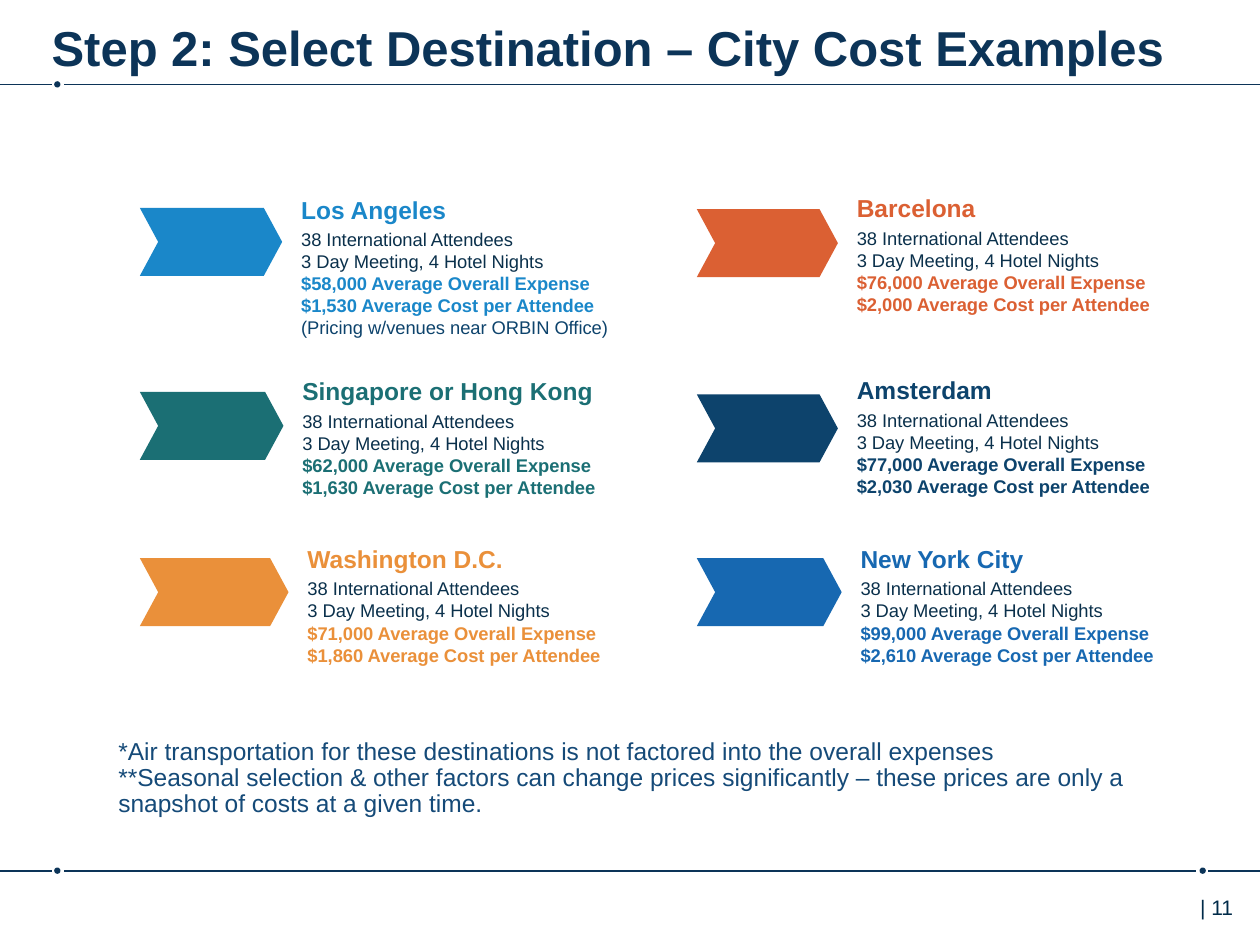
import lxml.etree
import pptx
import pptx.dml.color
import pptx.enum.shapes
import pptx.enum.text
import pptx.oxml.ns
import pptx.util

HUES = {
    "navy": "0C3458", "page": "002B49", "plain": "0A304B", "note": "154A78",
    "sky": "1A87C9", "teal": "1B6F74", "gold": "EA903A",
    "rust": "DB6033", "deep": "0D436C", "blue": "1768B1",
}
SHAPE = pptx.enum.shapes.MSO_SHAPE
ANCHOR = pptx.enum.text.MSO_ANCHOR
UNIT = pptx.util.Inches(0.1)  # grid of 100 columns by 75 rows
LEFT, RIGHT = 11.1, 55.3      # columns where the cards start

# start column, heading row, arrow drop, arrow width, heading and list widths
CARDS = [
    (LEFT, 15.2, 1.3, 11.3, 24.9, 26.1, "sky", "Los Angeles", "$58,000", "$1,530",
     "(Pricing w/venues near ORBIN Office)"),
    (LEFT, 29.6, 1.5, 11.4, 24.7, 24.6, "teal", "Singapore or Hong Kong",
     "$62,000", "$1,630", None),
    (LEFT, 42.9, 1.4, 11.8, 19.7, 25.5, "gold", "Washington D.C.",
     "$71,000", "$1,860", None),
    (RIGHT, 15.1, 1.5, 11.2, 15.6, 24.9, "rust", "Barcelona",
     "$76,000", "$2,000", None),
    (RIGHT, 29.5, 1.8, 11.2, 15.6, 25, "deep", "Amsterdam",
     "$77,000", "$2,030", None),
    (RIGHT, 42.9, 1.4, 11.5, 16, 25.6, "blue", "New York City",
     "$99,000", "$2,610", None),
]


def grid(*cells):
    return [round(cell * UNIT) for cell in cells]


def tint(name):
    return pptx.dml.color.RGBColor.from_string(HUES[name])


def put(item, form):
    for key, val in form.items():
        setattr(item, key, val)


def write(frame, lines, size, pads=(1, 0.5, 1, 0.5), anchor=ANCHOR.TOP, space=None):
    """Fill a text frame with lines of (words, colour, bold)."""
    sides = ("margin_left", "margin_top", "margin_right", "margin_bottom")
    put(frame, dict(zip(sides, grid(*pads))))
    put(frame, {"word_wrap": True, "vertical_anchor": anchor,
                "auto_size": pptx.enum.text.MSO_AUTO_SIZE.NONE})
    for spot, (words, hue, bold) in enumerate(lines):
        para = frame.add_paragraph() if spot else frame.paragraphs[0]
        put(para, {"text": words, "line_spacing": space,
                   "alignment": pptx.enum.text.PP_ALIGN.LEFT})
        font = para.runs[0].font
        put(font, {"name": "Arial", "size": pptx.util.Pt(size), "bold": bold})
        font.color.rgb = tint(hue)


def label(shapes, box, *args, **form):
    write(shapes.add_textbox(*grid(*box)).text_frame, *args, **form)


def block(shapes, kind, box, hue):
    shape = shapes.add_shape(kind, *grid(*box))
    shape.shadow.inherit = False
    shape.fill.solid()
    shape.fill.fore_color.rgb = tint(hue)
    shape.line.fill.background()
    return shape


def rule(shapes, row, spans, dots):
    """A ruled line in parts, with dots in its gaps."""
    for start, end in spans:
        line = shapes.add_connector(pptx.enum.shapes.MSO_CONNECTOR.STRAIGHT,
                                    *grid(start, row, end, row))
        line.line.color.rgb = tint("navy")
        line.line.width = pptx.util.Pt(1)
        lxml.etree.SubElement(line._element.spPr, pptx.oxml.ns.qn("a:effectLst"))
    for col in dots:
        block(shapes, SHAPE.OVAL, (col - 0.25, row - 0.25, 0.5, 0.5), "navy")


def card(shapes, col, row, drop, wide, head, span, hue, city, total, each, extra):
    """An arrow with a city heading and its cost lines on the right."""
    group = shapes.add_group_shape().shapes
    arrow = block(group, SHAPE.CHEVRON, (col, row + drop, wide, 5.4), hue)
    arrow.adjustments[0] = 0.27
    left = col + wide + 1.3
    pads = (0.2, 0.5, 0.2, 0.5)
    label(group, (left, row, head, 3.1), [(city, hue, True)], 14,
          pads=pads, anchor=ANCHOR.MIDDLE, space=0.9)
    lines = [
        ("38 International Attendees", "plain", False),
        ("3 Day Meeting, 4 Hotel Nights", "plain", False),
        (f"{total} Average Overall Expense", hue, True),
        (f"{each} Average Cost per Attendee", hue, True),
    ]
    if extra:
        lines.append((extra, "deep", False))
    tall = 1.1 + 1.75 * len(lines)
    label(group, (left, row + 2.45, span, tall), lines, 10.5, pads=pads)


def header(slide, box):
    title = slide.shapes.title
    put(title, dict(zip(("left", "top", "width", "height"), grid(*box))))
    write(title.text_frame,
          [("Step 2: Select Destination – City Cost Examples", "navy", True)],
          28, pads=(0, 0.9, 0, 0.5))
    rule(slide.shapes, 6.7, [(4.1, 0), (100, 5.1)], [4.55])


def notes(shapes, box):
    label(shapes, box, [
        ("*Air transportation for these destinations is not factored into "
         "the overall expenses", "note", False),
        ("**Seasonal selection & other factors can change prices significantly – "
         "these prices are only a snapshot of costs at a given time.", "note", False),
    ], 14, space=pptx.util.Pt(14.8))


def footer(shapes, box):
    rule(shapes, 69.1, [(4.1, 0), (94.9, 5.1), (95.9, 100)], [4.55, 95.45])
    label(shapes, box, [("| 11", "page", False)], 12, pads=(2.35, 0.5, 1, 0.5))


def main():
    deck = pptx.Presentation()
    put(deck, {"slide_width": 100 * UNIT, "slide_height": 75 * UNIT})
    slide = deck.slides.add_slide(deck.slide_layouts[5])
    header(slide, (4.1, 0.5, 94.1, 4.9))
    for parts in CARDS:
        card(slide.shapes, *parts)
    notes(slide.shapes, (8.4, 58.2, 82.5, 7.3))
    footer(slide.shapes, (92.9, 70.5, 8.7, 4))
    deck.save("out.pptx")


if __name__ == "__main__":
    main()
